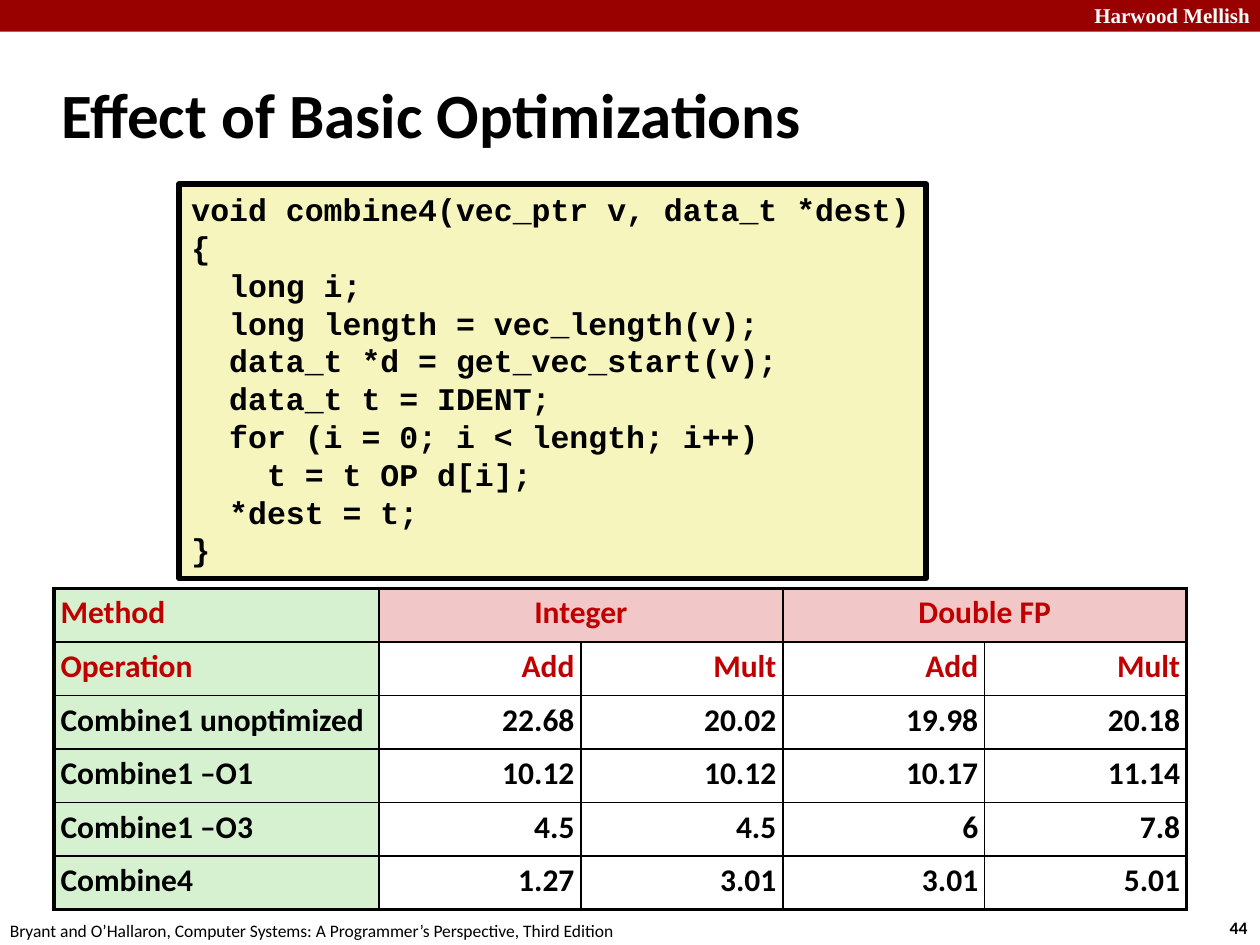
from lxml import etree
from pptx import Presentation
from pptx import util as u
from pptx.dml import color
from pptx.enum import shapes, text
from pptx.oxml import ns

BLACK, WHITE, BANNER, HEADING = "000000", "FFFFFF", "990000", "C00000"
CODE_FILL, GREEN, PINK = "F6F5BD", "D5F1CF", "F1C7C7"
LEFT, CENTER, RIGHT = text.PP_ALIGN.LEFT, text.PP_ALIGN.CENTER, text.PP_ALIGN.RIGHT
TOP, MIDDLE = text.MSO_ANCHOR.TOP, text.MSO_ANCHOR.MIDDLE

CODE = """void combine4(vec_ptr v, data_t *dest)
{
  long i;
  long length = vec_length(v);
  data_t *d = get_vec_start(v);
  data_t t = IDENT;
  for (i = 0; i < length; i++)
    t = t OP d[i];
  *dest = t;
}"""

TIMINGS = [
    ["Method", "Integer", "", "Double FP", ""],
    ["Operation", "Add", "Mult", "Add", "Mult"],
    ["Combine1 unoptimized", "22.68", "20.02", "19.98", "20.18"],
    ["Combine1 –O1", "10.12", "10.12", "10.17", "11.14"],
    ["Combine1 –O3", "4.5", "4.5", "6", "7.8"],
    ["Combine4", "1.27", "3.01", "3.01", "5.01"],
]


def rgb(value):
    return color.RGBColor.from_string(value)


class SlideBuilder:
    font = "Calibri"
    thin, thick = 1, 2.25

    def __init__(self, slide):
        self.slide = slide

    def set_text(self, frame, content, size, ink=BLACK, bold=True, align=LEFT, font=None, spacing=None):
        frame.text = content
        for paragraph in frame.paragraphs:
            paragraph.alignment = align
            paragraph.line_spacing = spacing
            paragraph.font.name = font or self.font
            paragraph.font.size = u.Pt(size)
            paragraph.font.bold = bold
            paragraph.font.color.rgb = rgb(ink)

    def label(self, box, content, size, anchor=TOP, wrap=False, **style):
        shape = self.slide.shapes.add_textbox(*map(u.Cm, box))
        shape.text_frame.word_wrap = wrap
        shape.text_frame.vertical_anchor = anchor
        self.set_text(shape.text_frame, content, size, **style)

    def rectangle(self, box, fill, line=None):
        shape = self.slide.shapes.add_shape(shapes.MSO_SHAPE.RECTANGLE, *map(u.Cm, box))
        shape.shadow.inherit = False
        shape.fill.solid()
        shape.fill.fore_color.rgb = rgb(fill)
        if line:
            shape.line.color.rgb = rgb(BLACK)
            shape.line.width = u.Pt(line)
        else:
            shape.line.fill.background()
        return shape

    def code(self, box, content):
        frame = self.rectangle(box, CODE_FILL, line=3).text_frame
        frame.word_wrap = False
        frame.vertical_anchor = TOP
        self.set_text(frame, content, 18, font="Courier New")

    def borders(self, cell, outer_sides):
        properties = cell._tc.get_or_add_tcPr()
        for side in "LRTB":
            width = self.thick if side in outer_sides else self.thin
            line = etree.SubElement(properties, ns.qn(f"a:ln{side}"), w=str(u.Pt(width)))
            fill = etree.SubElement(line, ns.qn("a:solidFill"))
            etree.SubElement(fill, ns.qn("a:srgbClr"), val=BLACK)

    def cell(self, cell, content, align, ink, fill, outer_sides):
        cell.margin_left = cell.margin_right = u.Cm(0.13)
        cell.margin_top = cell.margin_bottom = u.Cm(0.13)
        self.borders(cell, outer_sides)
        if fill:
            cell.fill.solid()
            cell.fill.fore_color.rgb = rgb(fill)
        else:
            cell.fill.background()
        self.set_text(cell.text_frame, content, 18, ink=ink, align=align, spacing=0.95)

    def table(self, left, top, widths, row_height, rows):
        last_row, last_column = len(rows) - 1, len(widths) - 1
        table = self.slide.shapes.add_table(
            len(rows), len(widths), u.Cm(left), u.Cm(top),
            u.Cm(sum(widths)), u.Cm(row_height * len(rows))).table
        table.first_row = table.horz_banding = False
        for column, width in zip(table.columns, widths):
            column.width = u.Cm(width)
        for r, values in enumerate(rows):
            table.rows[r].height = u.Cm(row_height)
            for c, value in enumerate(values):
                sides = {"L": c == 0, "R": c == last_column, "T": r == 0, "B": r == last_row}
                if r == 0 and c == last_column - 1:
                    sides["R"] = True
                self.cell(
                    table.cell(r, c), value,
                    align=LEFT if c == 0 else CENTER if r == 0 else RIGHT,
                    ink=HEADING if r < 2 else BLACK,
                    fill=GREEN if c == 0 else PINK if r == 0 else None,
                    outer_sides=[side for side, outer in sides.items() if outer])
        for c in (1, 3):
            table.cell(0, c).merge(table.cell(0, c + 1))


def main():
    presentation = Presentation()
    presentation.slide_width, presentation.slide_height = u.Cm(25.4), u.Cm(19.05)
    builder = SlideBuilder(presentation.slides.add_slide(presentation.slide_layouts[6]))
    builder.rectangle((0, 0, 25.4, 0.64), BANNER)
    builder.label((20.45, -0.08, 5, 0.76), "Harwood Mellish", 12, wrap=True,
                  ink=WHITE, align=RIGHT, font="Times New Roman")
    builder.label((24.54, 18.36, 0.94, 0.69), "44", 10)
    builder.label((-0.05, 18.42, 12.9, 0.69),
                  "Bryant and O’Hallaron, Computer Systems: A Programmer’s Perspective, Third Edition",
                  10, bold=False)
    builder.label((0.99, 1.22, 21.08, 2.11), "Effect of Basic Optimizations", 36,
                  anchor=MIDDLE, wrap=True)
    builder.code((3.61, 3.71, 15.06, 7.95), CODE)
    builder.table(1.09, 11.86, [6.55] + [4.07] * 4, 1.08, TIMINGS)
    presentation.save("out.pptx")


if __name__ == "__main__":
    main()
